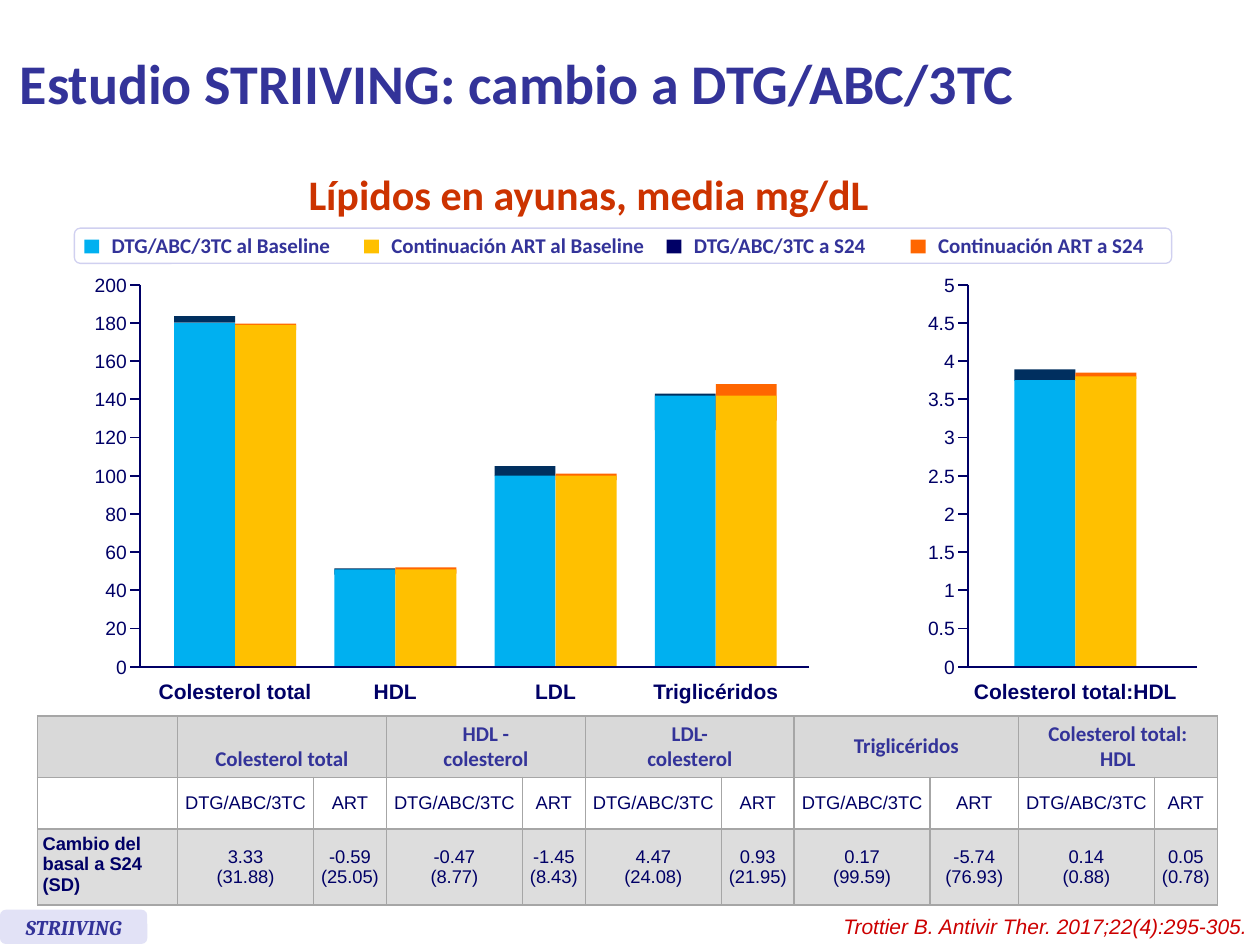
from lxml import etree
from pptx import Presentation
from pptx.dml.color import RGBColor
from pptx.enum.shapes import MSO_CONNECTOR, MSO_SHAPE
from pptx.enum.text import MSO_ANCHOR, MSO_AUTO_SIZE, PP_ALIGN
from pptx.oxml.ns import qn
from pptx.util import Cm, Pt

RECT, ROUNDED = MSO_SHAPE.RECTANGLE, MSO_SHAPE.ROUNDED_RECTANGLE
STRAIGHT = MSO_CONNECTOR.STRAIGHT
LEFT, CENTER, RIGHT = PP_ALIGN.LEFT, PP_ALIGN.CENTER, PP_ALIGN.RIGHT
TOP, MIDDLE, BOTTOM = MSO_ANCHOR.TOP, MSO_ANCHOR.MIDDLE, MSO_ANCHOR.BOTTOM
GROW = MSO_AUTO_SIZE.SHAPE_TO_FIT_TEXT

COLORS = {
    "indigo": "333399", "navy": "000066", "rust": "CC3300", "red": "CC0000",
    "lilac": "E2E2F6", "lilac_line": "D0D0F0", "white": "FFFFFF",
    "blue": "00B0F0", "gold": "FFC000", "dark_blue": "002F5F", "orange": "FF6600",
    "header": "D9D9D9", "values": "DDDDDD", "border": "A6A6A6",
}

# Each style: text colour and font attributes
STYLES = {
    "title": ("indigo", {"name": "Calibri", "size": Pt(32), "bold": True}),
    "subtitle": ("rust", {"name": "Calibri", "size": Pt(24), "bold": True}),
    "legend": ("indigo", {"name": "Calibri", "size": Pt(12), "bold": True}),
    "badge": ("indigo", {"name": "Cambria", "size": Pt(12), "bold": True, "italic": True}),
    "citation": ("red", {"name": "Arial", "size": Pt(12), "italic": True}),
    "tick": ("navy", {"name": "Arial", "size": Pt(11)}),
    "category": ("navy", {"name": "Arial", "size": Pt(12), "bold": True}),
    "cell": ("navy", {"name": "Arial", "size": Pt(10.5), "bold": False}),
    "row_head": ("navy", {"name": "Arial", "size": Pt(10.5), "bold": True}),
}

# Legend: label, colour, swatch left, label width (cm)
LEGEND = [
    ("DTG/ABC/3TC al Baseline", "blue", 1.7, 5.0),
    ("Continuación ART al Baseline", "gold", 7.34, 5.69),
    ("DTG/ABC/3TC a S24", "navy", 13.44, 4.06),
    ("Continuación ART a S24", "orange", 18.36, 4.72),
]

# Plots: groups hold label, label width, then (baseline, S24, cap height) per arm
PLOT_BOTTOM, PLOT_HEIGHT = 13.44, 7.7
BAR_WIDTH, GROUP_PITCH = 1.23, 3.23
ARM_COLORS = [("blue", "dark_blue"), ("gold", "orange")]
LIPIDS = {
    "axis": 2.82, "end": 16.31, "first_bar": 3.51, "top": 200, "step": 20,
    "groups": [
        ("Colesterol total", 3.1, [(180, 183.5, 0.13), (179, 179.6, 0.13)]),
        ("HDL", 0.89, [(51, 51.5, 0.13), (51, 52, 0.13)]),
        ("LDL", 0.84, [(100, 105, 0.2), (100, 101, 0.13)]),
        ("Triglicéridos", 2.54, [(142, 143, 0.74), (142, 148, 0.74)]),
    ],
}
RATIO = {
    "axis": 19.51, "end": 24.13, "first_bar": 20.45, "top": 5, "step": 0.5,
    "groups": [("Colesterol total:HDL", 4.24, [(3.75, 3.89, 0.23), (3.8, 3.85, 0.13)])],
}

COLUMN_WIDTHS = [2.82, 2.74, 1.47, 2.74, 1.27, 2.74, 1.47, 2.74, 1.78, 2.74, 1.27]
ROW_HEIGHTS = [1.24, 1.04, 1.42]
MEASURES = ["Colesterol total", "HDL -\vcolesterol", "LDL-\vcolesterol",
            "Triglicéridos", "Colesterol total:\vHDL"]
CHANGES = [
    ("3.33", "(31.88)"), ("-0.59", "(25.05)"), ("-0.47", "(8.77)"), ("-1.45", "(8.43)"),
    ("4.47", "(24.08)"), ("0.93", "(21.95)"), ("0.17", "(99.59)"), ("-5.74", "(76.93)"),
    ("0.14", "(0.88)"), ("0.05", "(0.78)"),
]


def rgb(color):
    return RGBColor.from_string(COLORS[color])


def write(frame, text, style, align):
    color, font_values = STYLES[style]
    frame.text = text
    for paragraph in frame.paragraphs:
        paragraph.alignment = align
        for run in paragraph.runs:
            run.font.color.rgb = rgb(color)
            for attribute, value in font_values.items():
                setattr(run.font, attribute, value)


def add_label(slide, text, style, box, align=LEFT, anchor=TOP, wrap=False, inset=True):
    frame = slide.shapes.add_textbox(*map(Cm, box)).text_frame
    frame.word_wrap = wrap
    frame.vertical_anchor = anchor
    if not wrap:
        frame.auto_size = GROW
    if not inset:
        for side in ("left", "top", "right", "bottom"):
            setattr(frame, f"margin_{side}", 0)
    write(frame, text, style, align)


def add_block(slide, kind, box, fill, line=None):
    block = slide.shapes.add_shape(kind, *map(Cm, box))
    block.shadow.inherit = False
    block.fill.solid()
    block.fill.fore_color.rgb = rgb(fill)
    if line:
        block.line.color.rgb = rgb(line)
        block.line.width = Pt(0.75)
    else:
        block.line.fill.background()
    return block


def add_line(slide, x1, y1, x2, y2):
    rule = slide.shapes.add_connector(STRAIGHT, *map(Cm, (x1, y1, x2, y2)))
    rule.line.color.rgb = rgb("navy")
    rule.line.width = Pt(1)
    etree.SubElement(rule._element.spPr, qn("a:effectLst"))


def add_legend(slide):
    add_block(slide, ROUNDED, (1.5, 4.6, 22.12, 0.71), "white", "lilac_line")
    for label, color, left, width in LEGEND:
        add_block(slide, RECT, (left, 4.83, 0.3, 0.28), color)
        add_label(slide, label, "legend", (left + 0.3, 4.57, width, 0.76))


def add_plot(slide, plot):
    axis, scale = plot["axis"], PLOT_HEIGHT / plot["top"]

    # Ticks and their values; the zero tick is the start of the base line
    for index in range(round(plot["top"] / plot["step"]) + 1):
        value = f"{index * plot['step']:g}"
        y = PLOT_BOTTOM - float(value) * scale
        if index:
            add_line(slide, axis, y, axis - 0.2, y)
        width = 0.23 * len(value)
        add_label(slide, value, "tick", (axis - 0.26 - width, y - 0.24, width, 0.47),
                  RIGHT, inset=False)

    # Pairs of bars, each with its week 24 cap behind the baseline bar
    for index, (name, width, arms) in enumerate(plot["groups"]):
        left = plot["first_bar"] + index * GROUP_PITCH
        for arm, (baseline, week_24, cap) in enumerate(arms):
            x = left + arm * BAR_WIDTH
            baseline_color, cap_color = ARM_COLORS[arm]
            height = baseline * scale
            add_block(slide, RECT, (x, PLOT_BOTTOM - week_24 * scale, BAR_WIDTH, cap), cap_color)
            add_block(slide, RECT, (x, PLOT_BOTTOM - height, BAR_WIDTH, height), baseline_color)
        add_label(slide, name, "category", (left + BAR_WIDTH - width / 2, 13.67, width, 0.51),
                  CENTER, inset=False)

    # Axes
    add_line(slide, axis, PLOT_BOTTOM - PLOT_HEIGHT, axis, PLOT_BOTTOM)
    add_line(slide, plot["end"], PLOT_BOTTOM, axis - 0.2, PLOT_BOTTOM)


def format_cell(cell, fill, text="", style="cell", align=CENTER, anchor=MIDDLE):
    cell.fill.solid()
    cell.fill.fore_color.rgb = rgb(fill)
    cell.vertical_anchor = anchor
    for side in ("left", "top", "right", "bottom"):
        setattr(cell, f"margin_{side}", Cm(0.1))
    write(cell.text_frame, text, style, align)
    properties = cell._tc.get_or_add_tcPr()
    for position, edge in enumerate(("a:lnL", "a:lnR", "a:lnT", "a:lnB")):
        border = etree.Element(qn(edge), w=str(Pt(1)))
        solid = etree.SubElement(border, qn("a:solidFill"))
        etree.SubElement(solid, qn("a:srgbClr"), val=COLORS["border"])
        properties.insert(position, border)


def add_changes_table(slide):
    table = slide.shapes.add_table(3, len(COLUMN_WIDTHS), Cm(0.76), Cm(14.43),
                                   Cm(sum(COLUMN_WIDTHS)), Cm(sum(ROW_HEIGHTS))).table
    table.first_row = table.horz_banding = False
    for column, width in zip(table.columns, COLUMN_WIDTHS):
        column.width = Cm(width)
    for row, height in zip(table.rows, ROW_HEIGHTS):
        row.height = Cm(height)

    format_cell(table.cell(0, 0), "header")
    format_cell(table.cell(1, 0), "white")
    format_cell(table.cell(2, 0), "values", "Cambio del basal a S24 (SD)", "row_head", LEFT, TOP)
    for index, measure in enumerate(MEASURES):
        first = 1 + 2 * index
        table.cell(0, first).merge(table.cell(0, first + 1))
        anchor = MIDDLE if measure == "Triglicéridos" else BOTTOM
        format_cell(table.cell(0, first), "header", measure, "legend", anchor=anchor)
        format_cell(table.cell(0, first + 1), "header")
    for column, change in enumerate(CHANGES, start=1):
        format_cell(table.cell(1, column), "white", "DTG/ABC/3TC" if column % 2 else "ART")
        format_cell(table.cell(2, column), "values", "\n".join(change))


def main():
    presentation = Presentation()
    presentation.slide_width, presentation.slide_height = Cm(25.4), Cm(19.05)
    slide = presentation.slides.add_slide(presentation.slide_layouts[6])

    # Headings
    add_label(slide, "Estudio STRIIVING: cambio a DTG/ABC/3TC", "title",
              (0.15, 0.13, 22.76, 3.07), anchor=MIDDLE, wrap=True)
    add_label(slide, "Lípidos en ayunas, media mg/dL", "subtitle",
              (5.97, 3.2, 12.98, 1.42), anchor=MIDDLE, wrap=True)

    # Lipid plots and table
    add_legend(slide)
    for plot in (LIPIDS, RATIO):
        add_plot(slide, plot)
    add_changes_table(slide)

    # Footer
    badge = add_block(slide, ROUNDED, (0, 18.34, 2.97, 0.69), "lilac").text_frame
    badge.word_wrap = False
    badge.vertical_anchor = MIDDLE
    write(badge, "STRIIVING", "badge", CENTER)
    add_label(slide, "Trottier B. Antivir Ther. 2017;22(4):295-305.", "citation",
              (16.66, 18.29, 8.74, 0.76), RIGHT)
    presentation.save("out.pptx")


if __name__ == "__main__":
    main()
